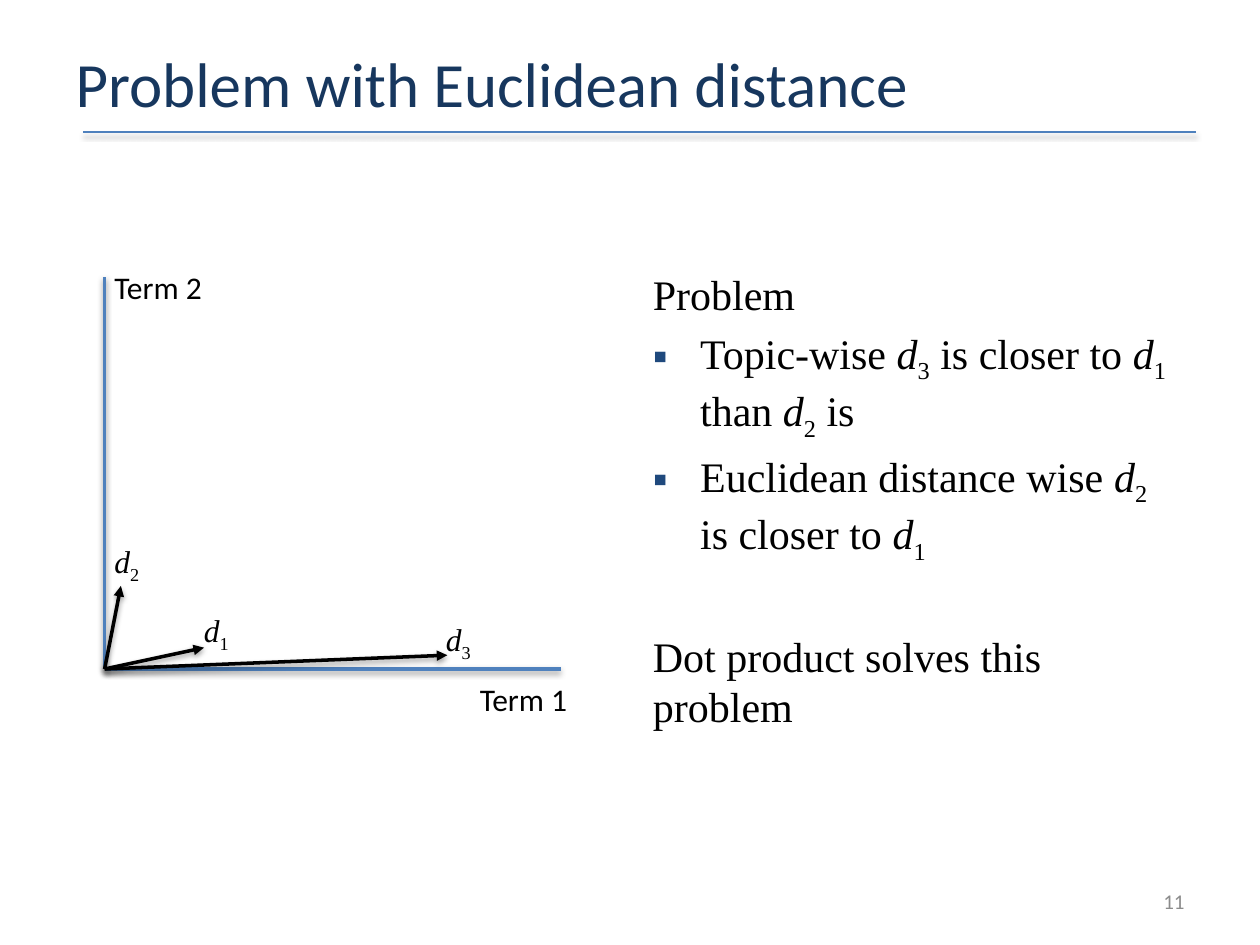
from dataclasses import dataclass
from itertools import cycle

from lxml import etree
from pptx import Presentation
from pptx.dml.color import RGBColor
from pptx.enum.shapes import MSO_CONNECTOR
from pptx.enum.text import MSO_ANCHOR, PP_ALIGN
from pptx.oxml.ns import qn
from pptx.util import Pt

STRAIGHT = MSO_CONNECTOR.STRAIGHT
LEFT, RIGHT = PP_ALIGN.LEFT, PP_ALIGN.RIGHT
TOP, MIDDLE = MSO_ANCHOR.TOP, MSO_ANCHOR.MIDDLE

NAVY = RGBColor(0x17, 0x37, 0x5E)
BLUE = RGBColor(0x4F, 0x81, 0xBD)
BLACK = RGBColor(0, 0, 0)
GRAY = RGBColor(0x8C, 0x8C, 0x8C)
BULLET_COLOR = "1F497D"
SANS, SERIF = "Calibri", "Times New Roman"
ORIGIN = (59.8, 382.3)


@dataclass(frozen=True)
class Line:
    start: tuple[float, float]
    end: tuple[float, float]
    color: RGBColor = BLUE
    weight: float = 2
    arrow: bool = False


@dataclass(frozen=True)
class Label:
    text: str
    left: float
    top: float
    width: float
    height: float = 29
    font: str = SANS
    size: float = 18
    color: RGBColor = BLACK
    align: PP_ALIGN = LEFT
    anchor: MSO_ANCHOR = TOP
    wrap: bool = False


@dataclass(frozen=True)
class Point:
    text: str
    bulleted: bool = False
    space_before: float = 4.8


LINES = [
    Line((47.5, 75.4), (683.5, 75.4), weight=1),
    Line((59.8, 158.4), ORIGIN),
    Line((320.4, 382.3), ORIGIN),
    Line(ORIGIN, (255.6, 374.4), BLACK, arrow=True),
    Line(ORIGIN, (116.6, 370.1), BLACK, arrow=True),
    Line(ORIGIN, (69.1, 334.8), BLACK, arrow=True),
]
LABELS = [
    Label("Term 1", 267.1, 385.2, 67),
    Label("Term 2", 58.3, 149.8, 67),
    Label("|d|2", 58.3, 306, 31.7, font=SERIF),
    Label("|d|3", 247.7, 350.6, 31.7, font=SERIF),
    Label("|d|1", 109.4, 345.6, 31.7, font=SERIF),
    Label("11", 516, 500.4, 168, size=12, color=GRAY, align=RIGHT, anchor=MIDDLE, wrap=True),
]
POINTS = [
    Point("Problem"),
    Point("Topic-wise |d|3| is closer to |d|1| than |d|2| is", bulleted=True),
    Point("Euclidean distance wise |d|2| is closer to |d|1", bulleted=True),
    Point("Dot product solves this problem", space_before=37.2),
]


def write_runs(paragraph, text: str, font: str, size: float, color: RGBColor) -> None:
    for part, role in zip(text.split("|"), cycle(("plain", "variable", "index"))):
        if not part:
            continue
        run = paragraph.add_run()
        run.text = part
        run.font.name = font
        run.font.size = Pt(size)
        run.font.color.rgb = color
        run.font.italic = role == "variable"
        if role == "index":
            run.font._element.set("baseline", "-25000")


def draw_line(slide, line: Line) -> None:
    ends = [Pt(value) for value in line.start + line.end]
    connector = slide.shapes.add_connector(STRAIGHT, *ends)
    connector.line.color.rgb = line.color
    connector.line.width = Pt(line.weight)
    if line.arrow:
        etree.SubElement(connector.line._get_or_add_ln(), qn("a:tailEnd"), type="triangle")


def draw_label(slide, label: Label) -> None:
    box = slide.shapes.add_textbox(
        Pt(label.left), Pt(label.top), Pt(label.width), Pt(label.height))
    frame = box.text_frame
    frame.word_wrap = label.wrap
    frame.vertical_anchor = label.anchor
    paragraph = frame.paragraphs[0]
    paragraph.alignment = label.align
    write_runs(paragraph, label.text, label.font, label.size, label.color)


def add_bullet(paragraph) -> None:
    properties = paragraph._p.get_or_add_pPr()
    properties.set("marL", str(Pt(27)))
    properties.set("indent", str(-Pt(27)))
    color = etree.SubElement(properties, qn("a:buClr"))
    etree.SubElement(color, qn("a:srgbClr"), val=BULLET_COLOR)
    etree.SubElement(properties, qn("a:buFont"), typeface="Arial")
    etree.SubElement(properties, qn("a:buChar"), char="▪")


def draw_points(slide, points: list[Point]) -> None:
    frame = slide.shapes.add_textbox(Pt(366), Pt(149.8), Pt(318), Pt(264)).text_frame
    frame.word_wrap = True
    for index, point in enumerate(points):
        paragraph = frame.add_paragraph() if index else frame.paragraphs[0]
        paragraph.space_before = Pt(point.space_before)
        if point.bulleted:
            add_bullet(paragraph)
        write_runs(paragraph, point.text, SERIF, 24, BLACK)


def draw_title(slide, text: str) -> None:
    title = slide.shapes.title
    title.left, title.top, title.width, title.height = Pt(36), Pt(21.6), Pt(648), Pt(51)
    frame = title.text_frame
    frame.vertical_anchor = MIDDLE
    paragraph = frame.paragraphs[0]
    paragraph.alignment = LEFT
    write_runs(paragraph, text, SANS, 36, NAVY)


def main() -> None:
    deck = Presentation()
    deck.slide_width, deck.slide_height = Pt(720), Pt(540)
    slide = deck.slides.add_slide(deck.slide_layouts[5])
    draw_title(slide, "Problem with Euclidean distance")
    draw_points(slide, POINTS)
    for line in LINES:
        draw_line(slide, line)
    for label in LABELS:
        draw_label(slide, label)
    deck.save("out.pptx")


if __name__ == "__main__":
    main()
